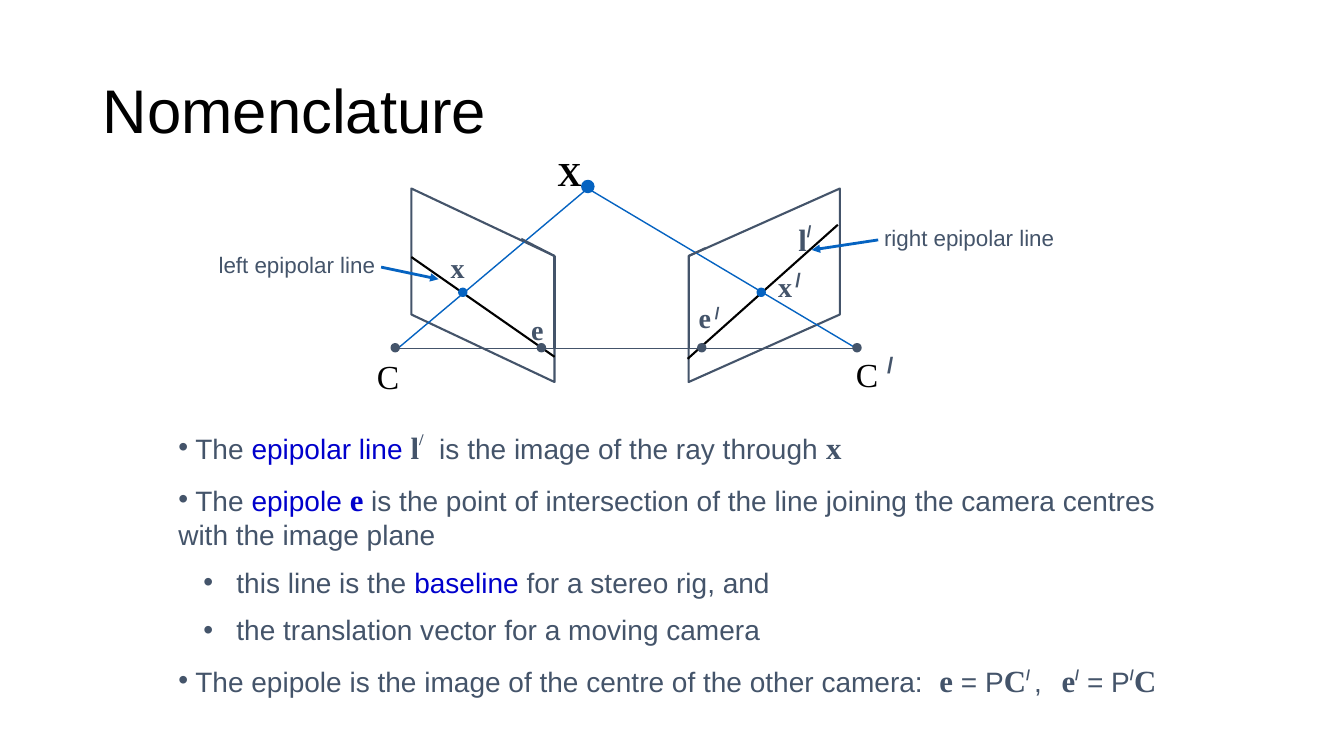
from typing import NamedTuple

from lxml import etree
from pptx import Presentation
from pptx import util as u
from pptx.dml.color import RGBColor
from pptx.enum import shapes, text
from pptx.oxml import ns

PX = 9144  # EMU per px, 100 px to the inch
SLATE = RGBColor(0x44, 0x54, 0x6A)
BLUE = RGBColor(0x05, 0x63, 0xC1)
TERM = RGBColor(0x00, 0x00, 0xCC)
BLACK = RGBColor(0, 0, 0)
SANS, SERIF = "Arial", "Times New Roman"


class Run(NamedTuple):
    text: str
    size: int = 20
    font: str = SANS
    color: RGBColor = SLATE
    bold: bool = False
    raised: bool = False


class Line(NamedTuple):
    start: tuple[int, int]
    end: tuple[int, int]
    color: RGBColor
    width: float
    arrow: bool = False


class Dot(NamedTuple):
    x: int
    y: int
    color: RGBColor
    size: int = 8


class Label(NamedTuple):
    x: int
    y: int
    width: int
    height: int
    runs: list[Run]


class Bullet(NamedTuple):
    level: int
    runs: list[Run]


def symbol(name: str, color: RGBColor = SLATE) -> Run:
    return Run(name, 22, SERIF, color, True)


def prime(size: int) -> list[Run]:
    return [Run(" ", 8, bold=True), Run("/", size, bold=True)]


def add_runs(p, runs: list[Run]) -> None:
    for item in runs:
        r = p.add_run()
        r.text = item.text
        r.font.size = u.Pt(item.size)
        r.font.name = item.font
        r.font.bold = item.bold
        r.font.color.rgb = item.color
        if item.raised:
            r._r.get_or_add_rPr().set("baseline", "50000")


def space_before_half(p) -> None:
    before = etree.SubElement(p._p.get_or_add_pPr(), ns.qn("a:spcBef"))
    etree.SubElement(before, ns.qn("a:spcPct")).set("val", "50000")


def add_box(sp_tree, x: int, y: int, width: int, height: int):
    tf = sp_tree.add_textbox(x * PX, y * PX, width * PX, height * PX).text_frame
    tf.word_wrap = True
    return tf


def add_label(sp_tree, label: Label) -> None:
    p = add_box(sp_tree, *label[:4]).paragraphs[0]
    space_before_half(p)
    add_runs(p, label.runs)


def add_bullets(tf, bullets: list[Bullet]) -> None:
    for i, bullet in enumerate(bullets):
        p = tf.add_paragraph() if i else tf.paragraphs[0]
        p.level = bullet.level
        pPr = p._p.get_or_add_pPr()
        pPr.set("marL", str(50 * PX * bullet.level))
        pPr.set("indent", str(-25 * PX * bullet.level))
        space_before_half(p)
        etree.SubElement(pPr, ns.qn("a:buFont")).set("typeface", SANS)
        etree.SubElement(pPr, ns.qn("a:buChar")).set("char", "•")
        add_runs(p, bullet.runs)


def add_line(sp_tree, line: Line) -> None:
    (x1, y1), (x2, y2) = line.start, line.end
    sp = sp_tree.add_connector(shapes.MSO_CONNECTOR.STRAIGHT,
                               x1 * PX, y1 * PX, x2 * PX, y2 * PX)
    sp.line.color.rgb = line.color
    sp.line.width = u.Pt(line.width)
    if line.arrow:
        etree.SubElement(sp.line._get_or_add_ln(), ns.qn("a:tailEnd")).set("type", "triangle")
    etree.SubElement(sp._element.spPr, ns.qn("a:effectLst"))


def add_dot(sp_tree, dot: Dot) -> None:
    left, top = dot.x - dot.size // 2, dot.y - dot.size // 2
    sp = sp_tree.add_shape(shapes.MSO_SHAPE.OVAL, left * PX, top * PX,
                           dot.size * PX, dot.size * PX)
    sp.shadow.inherit = False
    sp.fill.solid()
    sp.fill.fore_color.rgb = dot.color
    sp.line.color.rgb = dot.color
    sp.line.width = u.Pt(1)


def add_plane(sp_tree, outer_x: int, inner_x: int) -> None:
    builder = sp_tree.build_freeform(outer_x, 187, PX)
    builder.add_line_segments([(outer_x, 312), (inner_x, 379), (inner_x, 254)], close=True)
    sp = builder.convert_to_shape()
    sp.shadow.inherit = False
    sp.fill.background()
    sp.line.color.rgb = SLATE
    sp.line.width = u.Pt(1.5)


PLANES = [(408, 550), (833, 683)]

LINES = [
    # Epipolar lines
    Line((682, 356), (831, 223), BLACK, 1.5),
    Line((408, 255), (550, 354), BLACK, 1.5),
    # Rays and baseline
    Line((584, 186), (393, 347), BLUE, 1),
    Line((583, 187), (850, 346), BLUE, 1),
    Line((392, 346), (850, 346), SLATE, 1),
    # Plane edges in front of the rays
    Line((683, 254), (683, 346), SLATE, 1.5),
    Line((550, 254), (550, 346), SLATE, 1.5),
    Line((550, 254), (517, 237), SLATE, 1.5),
    Line((700, 246), (683, 254), SLATE, 1.5),
    # Callout arrows
    Line((378, 265), (435, 277), BLUE, 2, True),
    Line((871, 238), (805, 248), BLUE, 2, True),
]

DOTS = [Dot(x, 345, SLATE) for x in (392, 537, 696, 850)]
DOTS += [Dot(x, 290, BLUE) for x in (459, 755)]
DOTS += [Dot(583, 185, BLUE, 12)]

LABELS = [
    Label(437, 244, 33, 43, [Run("x", 20, SERIF, bold=True)]),
    Label(762, 262, 33, 43, [Run("x", 20, SERIF, bold=True)]),
    Label(776, 261, 58, 33, prime(14)),
    Label(543, 147, 40, 50, [Run("X", 24, SERIF, BLACK, True)]),
    Label(364, 348, 49, 50, [Run("C", 24, SERIF, BLACK)]),
    Label(839, 346, 49, 50, [Run("C", 24, SERIF, BLACK)]),
    Label(867, 343, 58, 37, prime(16)),
    Label(517, 305, 33, 43, [Run("e", 20, SERIF, bold=True)]),
    Label(683, 293, 33, 43, [Run("e", 20, SERIF, bold=True)]),
    Label(696, 295, 58, 30, prime(12)),
    Label(782, 214, 36, 47, [symbol("l"), Run("/", bold=True, raised=True)]),
    Label(207, 244, 177, 37, [Run("left epipolar line", 16)]),
    Label(867, 217, 257, 37, [Run("right epipolar line", 16)]),
]

SMALL_PRIME = Run("/", 18, bold=True, raised=True)
BULLETS = [
    Bullet(0, [Run(" The "), Run("epipolar line ", color=TERM), symbol("l"),
               Run("/", 20, SERIF, bold=True, raised=True),
               Run("  is the image of the ray through "), symbol("x")]),
    Bullet(0, [Run(" The "), Run("epipole ", color=TERM), symbol("e", TERM),
               Run(" is the point of intersection of the line joining "
                   "the camera centres with the image plane")]),
    Bullet(1, [Run(" this line is the "), Run("baseline", color=TERM),
               Run(" for a stereo rig, and")]),
    Bullet(1, [Run(" the translation vector for a moving camera")]),
    Bullet(0, [Run(" The epipole is the image of the centre of the other camera:  "),
               symbol("e"), Run(" = P"), symbol("C"), SMALL_PRIME._replace(text="/ "),
               Run(",  "), SMALL_PRIME._replace(text=" "), symbol("e"), SMALL_PRIME,
               Run(" = P"), SMALL_PRIME, symbol("C")]),
]


def main() -> None:
    prs = Presentation()
    prs.slide_width, prs.slide_height = 1333 * PX, 750 * PX
    s = prs.slides.add_slide(prs.slide_layouts[5])

    # Title
    title = s.shapes.title
    title.left, title.top, title.width, title.height = (n * PX for n in (92, 40, 1150, 145))
    title.text_frame.vertical_anchor = text.MSO_ANCHOR.MIDDLE
    p = title.text_frame.paragraphs[0]
    p.alignment = text.PP_ALIGN.LEFT
    p.line_spacing = 0.9
    add_runs(p, [Run("Nomenclature", 44, color=BLACK)])

    # Two-view diagram
    for outer_x, inner_x in PLANES:
        add_plane(s.shapes, outer_x, inner_x)
    for line in LINES:
        add_line(s.shapes, line)
    for dot in DOTS:
        add_dot(s.shapes, dot)
    for label in LABELS:
        add_label(s.shapes, label)

    # Definitions
    add_bullets(add_box(s.shapes, 167, 420, 1000, 290), BULLETS)
    prs.save("out.pptx")


if __name__ == "__main__":
    main()
